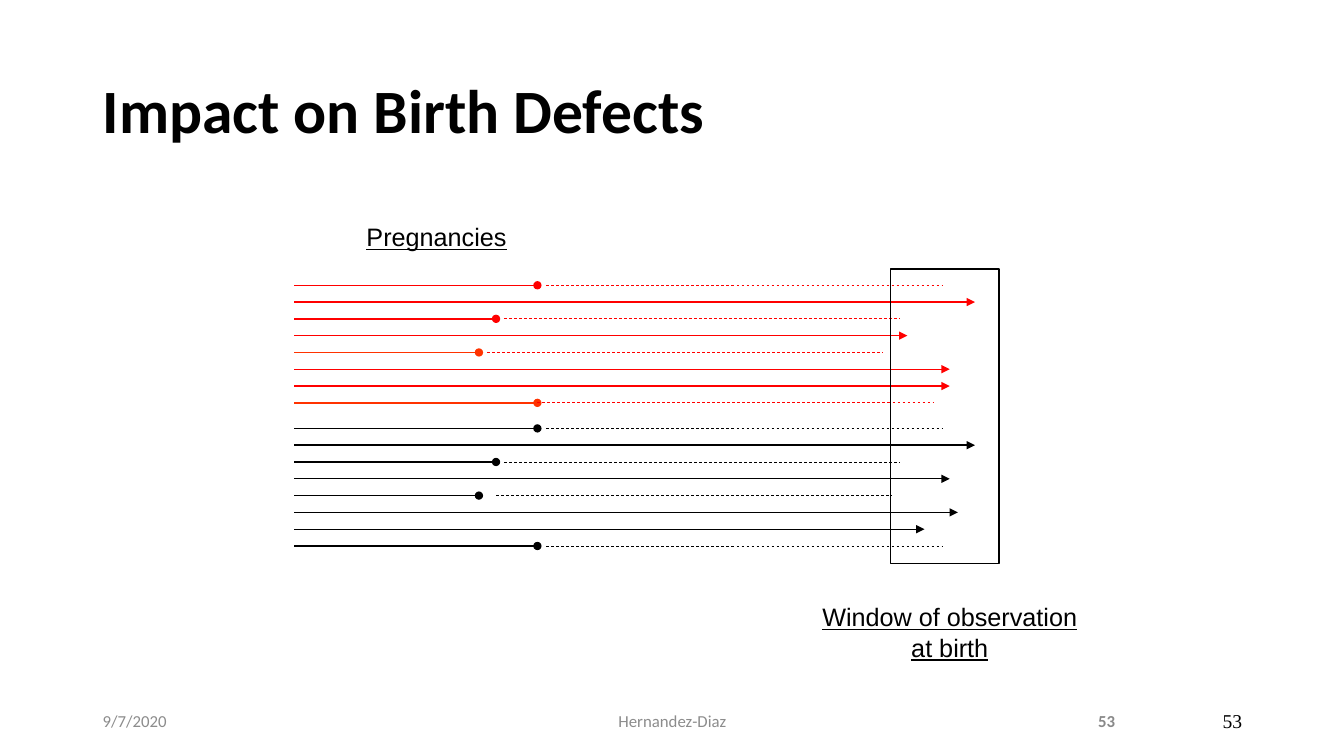
from dataclasses import dataclass

from lxml.etree import SubElement
from pptx import Presentation
from pptx.dml.color import RGBColor
from pptx.enum.dml import MSO_LINE_DASH_STYLE as Dash
from pptx.enum.shapes import MSO_CONNECTOR as Connector, MSO_SHAPE as Shape
from pptx.enum.text import MSO_ANCHOR as Anchor, MSO_AUTO_SIZE as AutoSize, PP_ALIGN as Align
from pptx.oxml.ns import qn
from pptx.slide import Slide
from pptx.text.text import TextFrame
from pptx.util import Inches, Pt

BLACK, RED, ORANGE = "000000", "FF0000", "FF3300"
START = 2.92
ROW_STEP = 1 / 6
LOST_LENGTH = 3.92


@dataclass
class Pregnancy:
    end: float
    lost_from: float | None = None
    color: str | None = None


@dataclass
class Group:
    top: float
    color: str
    pregnancies: list[Pregnancy]


@dataclass
class Label:
    text: str
    left: float
    top: float
    width: float
    height: float
    size: int
    font: str
    color: str
    align: Align
    bold: bool = False
    underline: bool = False
    anchor: Anchor = Anchor.MIDDLE
    auto_size: AutoSize = AutoSize.NONE


GROUPS = [
    Group(2.83, RED, [
        Pregnancy(5.33, 5.42),
        Pregnancy(9.67),
        Pregnancy(4.92, 5),
        Pregnancy(9),
        Pregnancy(4.75, 4.83, ORANGE),
        Pregnancy(9.42),
        Pregnancy(9.42),
        Pregnancy(5.33, 5.33, ORANGE),
    ]),
    Group(4.25, BLACK, [
        Pregnancy(5.33, 5.42),
        Pregnancy(9.67),
        Pregnancy(4.92, 5),
        Pregnancy(9.42),
        Pregnancy(4.75, 4.92),
        Pregnancy(9.5),
        Pregnancy(9.17),
        Pregnancy(5.33, 5.42),
    ]),
]

TITLE = Label("Impact on Birth Defects", 0.92, 0.4, 11.5, 1.45, 44, "Calibri", BLACK,
              Align.LEFT, bold=True)
LABELS = [
    Label("Pregnancies", 2.83, 2.15, 3, 0.4, 18, "Arial", BLACK, Align.CENTER,
          underline=True, anchor=Anchor.TOP, auto_size=AutoSize.SHAPE_TO_FIT_TEXT),
    Label("Window of observation at birth", 7.92, 5.92, 3, 0.71, 18, "Arial", BLACK, Align.CENTER,
          underline=True, anchor=Anchor.TOP, auto_size=AutoSize.SHAPE_TO_FIT_TEXT),
    Label("9/7/2020", 0.92, 6.95, 3, 0.4, 12, "Calibri", "8C8C8C", Align.LEFT),
    Label("Hernandez-Diaz", 4.42, 6.95, 4.5, 0.4, 12, "Calibri", "8C8C8C", Align.CENTER),
    Label("53", 8.83, 6.95, 2.33, 0.4, 12, "Calibri", "898989", Align.RIGHT, bold=True),
    Label("53", 9.42, 6.95, 3, 0.4, 14, "Times New Roman", BLACK, Align.RIGHT),
]


def rgb(color: str) -> RGBColor:
    return RGBColor.from_string(color)


def write_label(frame: TextFrame, label: Label) -> None:
    frame.word_wrap = True
    frame.auto_size = label.auto_size
    frame.vertical_anchor = label.anchor
    paragraph = frame.paragraphs[0]
    paragraph.alignment = label.align
    run = paragraph.add_run()
    run.text = label.text
    run.font.name = label.font
    run.font.size = Pt(label.size)
    run.font.bold = label.bold
    run.font.underline = label.underline
    run.font.color.rgb = rgb(label.color)


def draw_title(slide: Slide, label: Label) -> None:
    title = slide.shapes.title
    title.left, title.top = Inches(label.left), Inches(label.top)
    title.width, title.height = Inches(label.width), Inches(label.height)
    write_label(title.text_frame, label)
    title.text_frame.paragraphs[0].line_spacing = 0.9


def draw_label(slide: Slide, label: Label) -> None:
    box = slide.shapes.add_textbox(Inches(label.left), Inches(label.top),
                                   Inches(label.width), Inches(label.height))
    write_label(box.text_frame, label)


def draw_line(slide: Slide, start: float, end: float, y: float, color: str,
              width: float, tail: str | None = None) -> None:
    connector = slide.shapes.add_connector(Connector.STRAIGHT, Inches(start), Inches(y),
                                           Inches(end), Inches(y))
    connector.line.color.rgb = rgb(color)
    connector.line.width = Pt(width)
    if tail:
        SubElement(connector.line._get_or_add_ln(), qn("a:tailEnd"), type=tail)
    else:
        connector.line.dash_style = Dash.DASH
    SubElement(connector._element.spPr, qn("a:effectLst"))


def draw_group(slide: Slide, group: Group) -> None:
    for row, pregnancy in enumerate(group.pregnancies):
        y = group.top + row * ROW_STEP
        lost = pregnancy.lost_from
        tail = "triangle" if lost is None else "oval"
        draw_line(slide, START, pregnancy.end, y, pregnancy.color or group.color, 1, tail)
        if lost is not None:
            draw_line(slide, lost, lost + LOST_LENGTH, y, group.color, 0.5)


def draw_window(slide: Slide) -> None:
    window = slide.shapes.add_shape(Shape.RECTANGLE, Inches(8.83), Inches(2.67),
                                    Inches(1.08), Inches(2.92))
    window.shadow.inherit = False
    window.fill.background()
    window.line.color.rgb = rgb(BLACK)
    window.line.width = Pt(1)


def main() -> None:
    presentation = Presentation()
    presentation.slide_width, presentation.slide_height = Inches(13.33), Inches(7.5)
    slide = presentation.slides.add_slide(presentation.slide_layouts[5])
    draw_title(slide, TITLE)
    for group in GROUPS:
        draw_group(slide, group)
    draw_window(slide)
    for label in LABELS:
        draw_label(slide, label)
    presentation.save("out.pptx")


if __name__ == "__main__":
    main()
